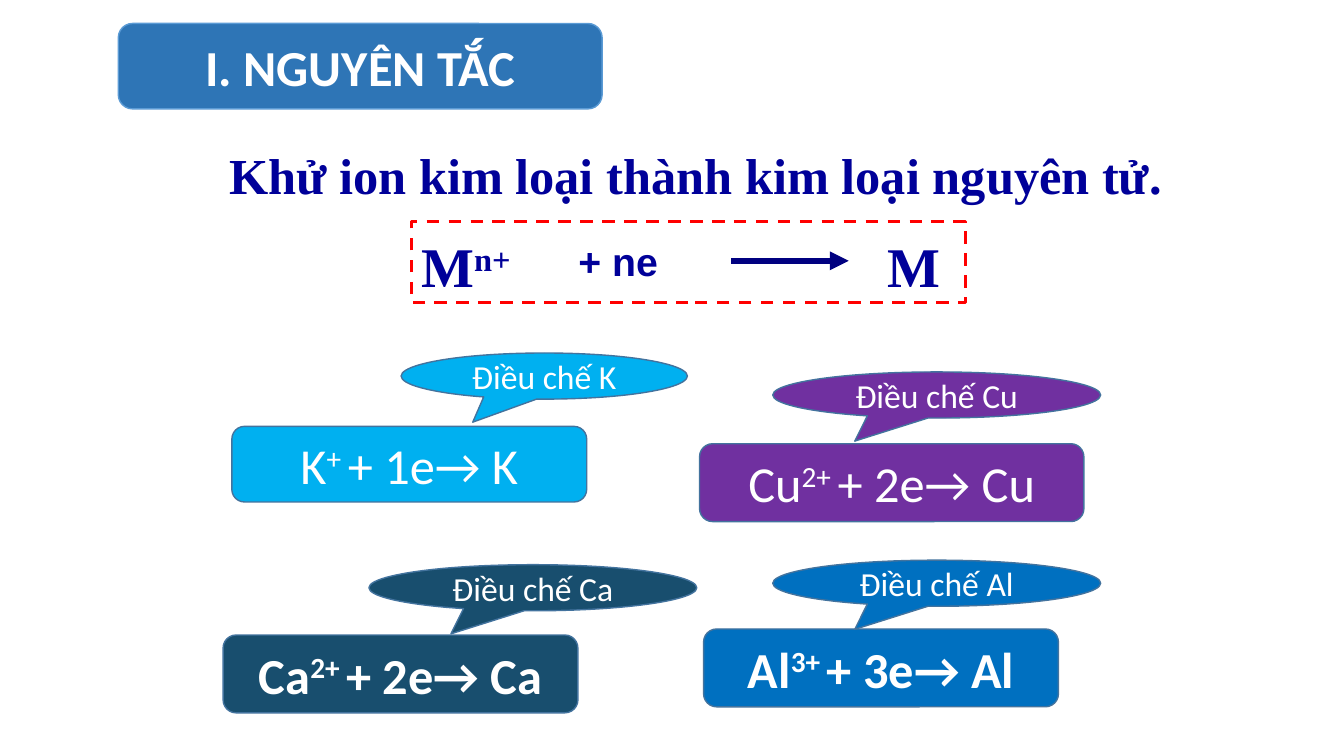
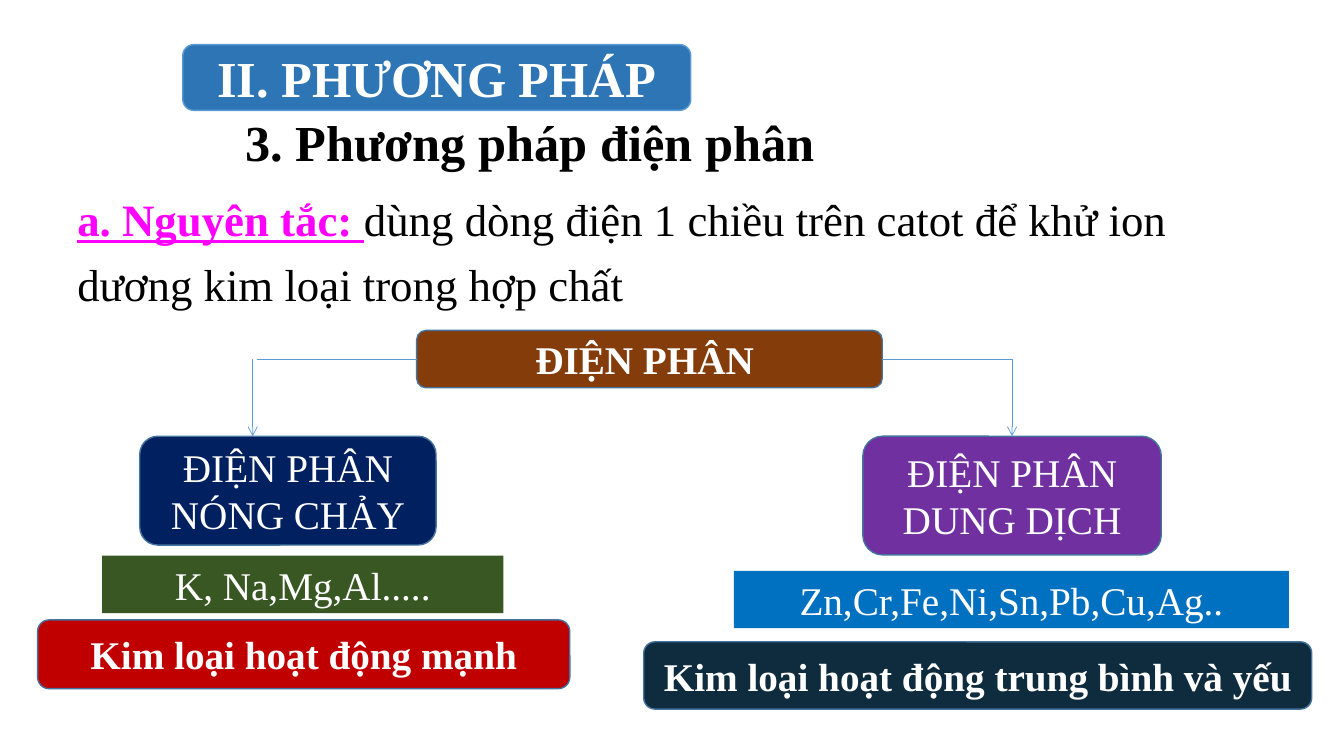
from dataclasses import dataclass
from typing import Optional

from lxml import etree
from pptx import Presentation
from pptx.dml.color import RGBColor
from pptx.enum.dml import MSO_LINE
from pptx.enum.shapes import MSO_CONNECTOR, MSO_SHAPE
from pptx.enum.text import MSO_ANCHOR, MSO_AUTO_SIZE, PP_ALIGN
from pptx.oxml.ns import qn
from pptx.util import Emu, Inches, Pt

RECT = MSO_SHAPE.RECTANGLE
ROUNDED = MSO_SHAPE.ROUNDED_RECTANGLE
CALLOUT = MSO_SHAPE.OVAL_CALLOUT
STRAIGHT = MSO_CONNECTOR.STRAIGHT
DASH = MSO_LINE.DASH
TOP, MIDDLE = MSO_ANCHOR.TOP, MSO_ANCHOR.MIDDLE
LEFT, CENTER = PP_ALIGN.LEFT, PP_ALIGN.CENTER
FIXED, GROW = MSO_AUTO_SIZE.NONE, MSO_AUTO_SIZE.SHAPE_TO_FIT_TEXT
SIDE_TOP, SIDE_LEFT, SIDE_RIGHT = 0, 1, 3

WHITE = RGBColor(0xFF, 0xFF, 0xFF)
BLACK = RGBColor(0, 0, 0)
INK = RGBColor(0, 0, 0x99)
NAVY = RGBColor(0, 0, 0x80)
MAGENTA = RGBColor(0xFF, 0, 0xFF)
RED = RGBColor(0xFF, 0, 0)
BANNER_BLUE = RGBColor(0x2E, 0x75, 0xB6)
LINE_BLUE = RGBColor(0x5B, 0x9B, 0xD5)
OUTLINE = RGBColor(0x43, 0x73, 0x9E)
SKY = RGBColor(0, 0xB0, 0xF0)
TEAL = RGBColor(0x18, 0x4E, 0x6E)
PURPLE = RGBColor(0x70, 0x30, 0xA0)
BLUE = RGBColor(0, 0x70, 0xC0)
BROWN = RGBColor(0x84, 0x3C, 0x0B)
MIDNIGHT = RGBColor(0, 0x20, 0x60)
GREEN = RGBColor(0x38, 0x57, 0x23)
CRIMSON = RGBColor(0xC0, 0, 0)
DEEP_TEAL = RGBColor(0x0E, 0x2C, 0x3E)

SERIF, SANS, ARIAL = "Times New Roman", "Calibri", "Arial"

# The slide is a grid of 100 columns by 100 rows.
WIDTH, HEIGHT = Inches(13.33), Inches(7.5)
COLUMN, ROW = WIDTH / 100, HEIGHT / 100


@dataclass(frozen=True)
class Area:
    """A rectangle in grid columns and rows."""
    left: float
    top: float
    width: float
    height: float

    def lengths(self):
        return (Emu(round(self.left * COLUMN)), Emu(round(self.top * ROW)),
                Emu(round(self.width * COLUMN)), Emu(round(self.height * ROW)))


@dataclass(frozen=True)
class Style:
    size: float
    font: str = SERIF
    color: RGBColor = WHITE
    bold: bool = False
    align: PP_ALIGN = CENTER


@dataclass(frozen=True)
class Span:
    text: str
    raised: bool = False


@dataclass(frozen=True)
class Reaction:
    metal: str
    charge: str
    electrons: int
    color: RGBColor
    bold: bool
    box: Area
    callout: Area


@dataclass(frozen=True)
class Block:
    text: str
    kind: MSO_SHAPE
    color: RGBColor
    bold: bool
    area: Area


REACTIONS = (
    Reaction("K", "+", 1, SKY, False,
             Area(17.25, 56.4, 26.4, 10), Area(29.85, 46.7, 21.3, 6.1)),
    Reaction("Ca", "2+", 2, TEAL, True,
             Area(16.6, 84, 26.4, 10.3), Area(27.45, 74.7, 24.4, 6.1)),
    Reaction("Cu", "2+", 2, PURPLE, False,
             Area(52.05, 58.7, 28.6, 10.3), Area(57.5, 49.2, 24.4, 6.1)),
    Reaction("Al", "3+", 3, BLUE, True,
             Area(52.35, 83.2, 26.4, 10.3), Area(57.5, 74.1, 24.4, 6.1)),
)

ROOT = Block("ĐIỆN PHÂN ", ROUNDED, BROWN, True, Area(31, 43.7, 34.65, 7.6))
MOLTEN = Block("ĐIỆN PHÂN NÓNG CHẢY", ROUNDED, MIDNIGHT, False,
               Area(10.4, 57.7, 22.05, 14.4))
SOLUTION = Block("ĐIỆN PHÂN DUNG DỊCH", ROUNDED, PURPLE, False,
                 Area(64.2, 57.7, 22.2, 15.7))
DETAILS = (
    Block("K, Na,Mg,Al.....", RECT, GREEN, False, Area(7.6, 73.5, 29.85, 7.6)),
    Block("Zn,Cr,Fe,Ni,Sn,Pb,Cu,Ag..", RECT, BLUE, False,
          Area(54.6, 75.5, 41.3, 7.6)),
    Block("Kim loại hoạt động mạnh", ROUNDED, CRIMSON, True,
          Area(2.8, 82, 39.6, 9.1)),
    Block("Kim loại hoạt động trung bình và yếu", ROUNDED, DEEP_TEAL, True,
          Area(47.9, 84.9, 49.7, 8.9)),
)


def write(shape, spans: tuple[Span, ...], style: Style, anchor=MIDDLE,
          auto_size=FIXED, wrap=True):
    """Fill the first paragraph and return it."""
    frame = shape.text_frame
    frame.word_wrap = wrap
    frame.auto_size = auto_size
    frame.vertical_anchor = anchor
    para = frame.paragraphs[0]
    para.alignment = style.align
    font = para.font
    font.size, font.name, font.bold = Pt(style.size), style.font, style.bold
    font.color.rgb = style.color
    for span in spans:
        run = para.add_run()
        run.text = span.text
        if span.raised:
            run._r.get_or_add_rPr().set("baseline", "30000")
    return para


def add_box(page, kind: MSO_SHAPE, area: Area, fill: Optional[RGBColor],
            line: Optional[RGBColor] = OUTLINE, line_width: float = 1):
    box = page.shapes.add_shape(kind, *area.lengths())
    box.shadow.inherit = False
    if fill is None:
        box.fill.background()
    else:
        box.fill.solid()
        box.fill.fore_color.rgb = fill
    if line is None:
        box.line.fill.background()
    else:
        box.line.color.rgb = line
        box.line.width = Pt(line_width)
    return box


def add_block(page, block: Block):
    line = OUTLINE if block.kind == ROUNDED else None
    box = add_box(page, block.kind, block.area, block.color, line)
    write(box, (Span(block.text),), Style(28, bold=block.bold))
    return box


def add_label(page, area: Area, text: str, style: Style) -> None:
    box = page.shapes.add_textbox(*area.lengths())
    write(box, (Span(text),), style, TOP, GROW, wrap=False)


def add_line(page, start: tuple[float, float], end: tuple[float, float],
             color: RGBColor, width: float, head: Optional[str] = None):
    (x1, y1), (x2, y2) = start, end
    line = page.shapes.add_connector(
        STRAIGHT, round(x1 * COLUMN), round(y1 * ROW),
        round(x2 * COLUMN), round(y2 * ROW))
    line.line.color.rgb = color
    line.line.width = Pt(width)
    if head:
        etree.SubElement(line.line._get_or_add_ln(), qn("a:tailEnd"), type=head)
    etree.SubElement(line.element.spPr, qn("a:effectLst"))
    return line


def place(shape, area: Area) -> None:
    shape.left, shape.top, shape.width, shape.height = area.lengths()


def add_page(deck, title: str, font: str, banner_area: Area, body_area: Area):
    """Add a slide with its title on a banner; return it with its body."""
    page = deck.slides.add_slide(deck.slide_layouts[1])
    heading, body = page.shapes.title, page.placeholders[1]
    banner = add_box(page, ROUNDED, banner_area, BANNER_BLUE, LINE_BLUE)
    heading.element.addprevious(banner.element)
    place(heading, banner_area)
    write(heading, (Span(title),), Style(36, font, bold=True))
    place(body, body_area)
    return page, body


def remove_bullet(para) -> None:
    properties = para._p.get_or_add_pPr()
    properties.insert_element_before(
        etree.SubElement(properties, qn("a:buNone")), "a:tabLst", "a:defRPr")


def add_tab_stop(para, position: Emu) -> None:
    properties = para._p.get_or_add_pPr()
    tabs = etree.SubElement(properties, qn("a:tabLst"))
    etree.SubElement(tabs, qn("a:tab"), pos=str(position), algn="l")
    properties.insert_element_before(tabs, "a:defRPr")


def add_reaction(page, reaction: Reaction) -> None:
    metal = reaction.metal
    box = add_box(page, ROUNDED, reaction.box, reaction.color)
    write(box, (Span(metal), Span(f"{reaction.charge} ", raised=True),
                Span(f"+ {reaction.electrons}e→ {metal}")),
          Style(36, SANS, bold=reaction.bold))
    callout = add_box(page, CALLOUT, reaction.callout, reaction.color)
    callout.adjustments[0], callout.adjustments[1] = -0.25, 1
    write(callout, (Span(f"Điều chế {metal}"),), Style(24, SANS))


def build_principle(deck) -> None:
    page, body = add_page(deck, "I. NGUYÊN TẮC", SANS,
                          Area(8.8, 3.1, 36, 11.3), Area(16.3, 16, 72.5, 15.6))
    para = write(body, (Span("Khử ion kim loại thành kim loại nguyên tử."),),
                 Style(36, color=INK, bold=True, align=LEFT))
    para.line_spacing = 0.8
    remove_bullet(para)

    formula = add_box(page, RECT, Area(30.6, 29.33, 41.25, 10.67), None, RED, 2.25)
    formula.line.dash_style = DASH
    para = write(formula, (Span("M"), Span("n+", raised=True), Span("\tM")),
                 Style(40, color=INK, bold=True, align=LEFT), TOP)
    formula.text_frame.margin_top = Inches(0.1)
    add_tab_stop(para, Inches(4.62))
    add_line(page, (54.4, 34.5), (63.15, 34.5), NAVY, 4.5, "triangle")
    add_label(page, Area(42.3, 30.8, 7.4, 7.6), "+ ne",
              Style(28, ARIAL, INK, True, LEFT))
    for reaction in REACTIONS:
        add_reaction(page, reaction)


def build_electrolysis(deck) -> None:
    page, body = add_page(deck, "II. PHƯƠNG PHÁP", SERIF,
                          Area(13.6, 5.9, 37.8, 8.7), Area(5, 23.3, 91.9, 17.9))
    para = write(body, (Span("a. Nguyên tắc: "),
                        Span("dùng dòng điện 1 chiều trên catot để khử ion "
                             "dương kim loại trong hợp chất")),
                 Style(32, color=BLACK, align=LEFT), TOP)
    para.line_spacing = 1.2
    para.space_before = Pt(0)
    remove_bullet(para)
    properties = para._p.get_or_add_pPr()
    properties.set("marL", "0")
    properties.set("indent", "0")
    lead = para.runs[0].font
    lead.bold = lead.underline = True
    lead.color.rgb = MAGENTA
    add_label(page, Area(17.5, 14.1, 44.25, 9.5), "3. Phương pháp điện phân",
              Style(36, color=BLACK, bold=True, align=LEFT))

    root = add_block(page, ROOT)
    add_block(page, MOLTEN)
    solution = add_block(page, SOLUTION)
    for detail in DETAILS:
        add_block(page, detail)

    level, floor = 47.5, MOLTEN.area.top
    left, right = 18.8, SOLUTION.area.left + SOLUTION.area.width / 2
    for side, edge, end in ((SIDE_RIGHT, 65.65, right), (SIDE_LEFT, 31, 19.1)):
        branch = add_line(page, (edge, level), (end, level), LINE_BLUE, 0.5)
        branch.begin_connect(root, side)
    add_line(page, (left, level), (left, floor), LINE_BLUE, 0.5, "arrow")
    drop = add_line(page, (right, level), (right, floor), LINE_BLUE, 0.5, "arrow")
    drop.end_connect(solution, SIDE_TOP)


def main() -> None:
    deck = Presentation()
    deck.slide_width, deck.slide_height = WIDTH, HEIGHT
    build_principle(deck)
    build_electrolysis(deck)
    deck.save("out.pptx")


if __name__ == "__main__":
    main()
